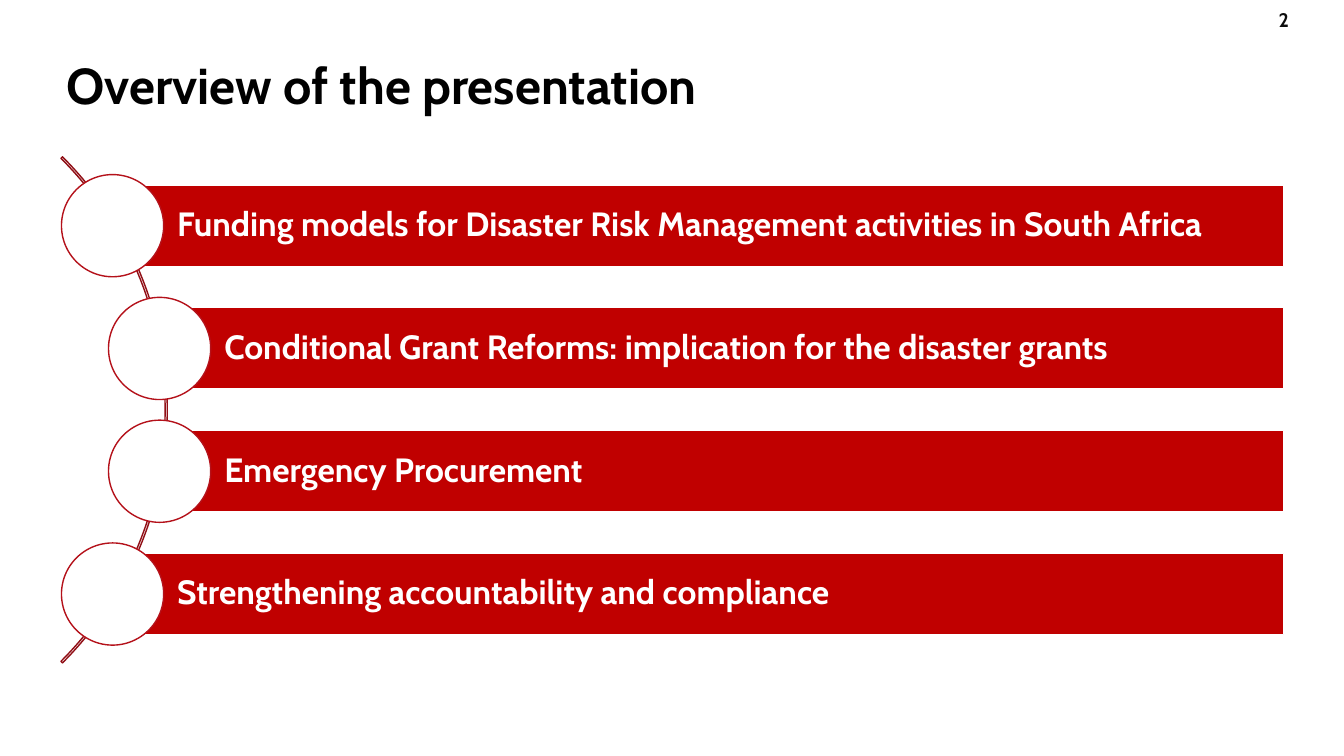
from pptx import Presentation
from pptx.dml.color import RGBColor
from pptx.enum.shapes import MSO_SHAPE as Preset
from pptx.enum.text import MSO_ANCHOR as Anchor, PP_ALIGN as Align
from pptx.util import Pt

TITLE = "Overview of the presentation"
PAGE_NUMBER = "2"
TOPICS = [
    ("Funding models for Disaster Risk Management activities in South Africa", 80.4),
    ("Conditional Grant Reforms: implication for the disaster grants", 114),
    ("Emergency Procurement", 114),
    ("Strengthening accountability and compliance", 80.4),
]
COLORS = {
    "bar": "C00000", "white": "FFFFFF", "circle_line": "B4111A",
    "arc_line": "900E15", "title": "000000", "number": "0D0D0D",
}
FONT = "Cabin"
FIRST_CENTER, PITCH = 161.2, 87.7
BAR_RIGHT, BAR_HEIGHT = 917, 58.2
CIRCLE_SIZE = 73
ARC_SIZE, ARC_CENTER_X = 511.2, -136.1


def color(name):
    return RGBColor.from_string(COLORS[name])


def write(shape, text, size, color_name, align=Align.LEFT, line_spacing=None):
    frame = shape.text_frame
    frame.text = text
    frame.word_wrap = True
    frame.vertical_anchor = Anchor.MIDDLE
    paragraph = frame.paragraphs[0]
    paragraph.alignment = align
    paragraph.line_spacing = line_spacing
    font = paragraph.runs[0].font
    font.name, font.size, font.bold = FONT, Pt(size), True
    font.color.rgb = color(color_name)


def add_centered(slide, preset, center_x, center_y, width, height, line, fill=None):
    shape = slide.shapes.add_shape(
        preset, Pt(center_x - width / 2), Pt(center_y - height / 2), Pt(width), Pt(height))
    shape.shadow.inherit = False
    shape.line.color.rgb = color(line)
    shape.line.width = Pt(1)
    if fill:
        shape.fill.solid()
        shape.fill.fore_color.rgb = color(fill)
    else:
        shape.fill.background()
    return shape


def add_topic(slide, text, left, center_y):
    bar = add_centered(slide, Preset.RECTANGLE, (left + BAR_RIGHT) / 2, center_y,
                       BAR_RIGHT - left, BAR_HEIGHT, "white", "bar")
    frame = bar.text_frame
    frame.margin_left = Pt(46.2)
    frame.margin_top = frame.margin_right = frame.margin_bottom = Pt(5)
    write(bar, text, 24, "white", line_spacing=0.9)
    add_centered(slide, Preset.OVAL, left, center_y,
                 CIRCLE_SIZE, CIRCLE_SIZE, "circle_line", "white")


def main():
    presentation = Presentation()
    presentation.slide_width, presentation.slide_height = Pt(960), Pt(540)
    slide = presentation.slides.add_slide(presentation.slide_layouts[5])

    title = slide.shapes.title
    title.left, title.top, title.width, title.height = Pt(40.3), Pt(19.5), Pt(898.6), Pt(87)
    write(title, TITLE, 36, "title", line_spacing=0.9)

    number = slide.shapes.add_textbox(Pt(895.7), Pt(0), Pt(42.5), Pt(28.8))
    write(number, PAGE_NUMBER, 14, "number", Align.CENTER)

    arc_center_y = FIRST_CENTER + PITCH * (len(TOPICS) - 1) / 2
    arc = add_centered(slide, Preset.BLOCK_ARC, ARC_CENTER_X, arc_center_y,
                       ARC_SIZE, ARC_SIZE, "arc_line")
    for index, value in enumerate((189, 27, 0.003)):
        arc.adjustments[index] = value

    for index, (text, left) in enumerate(TOPICS):
        add_topic(slide, text, left, FIRST_CENTER + index * PITCH)

    presentation.save("out.pptx")


if __name__ == "__main__":
    main()
